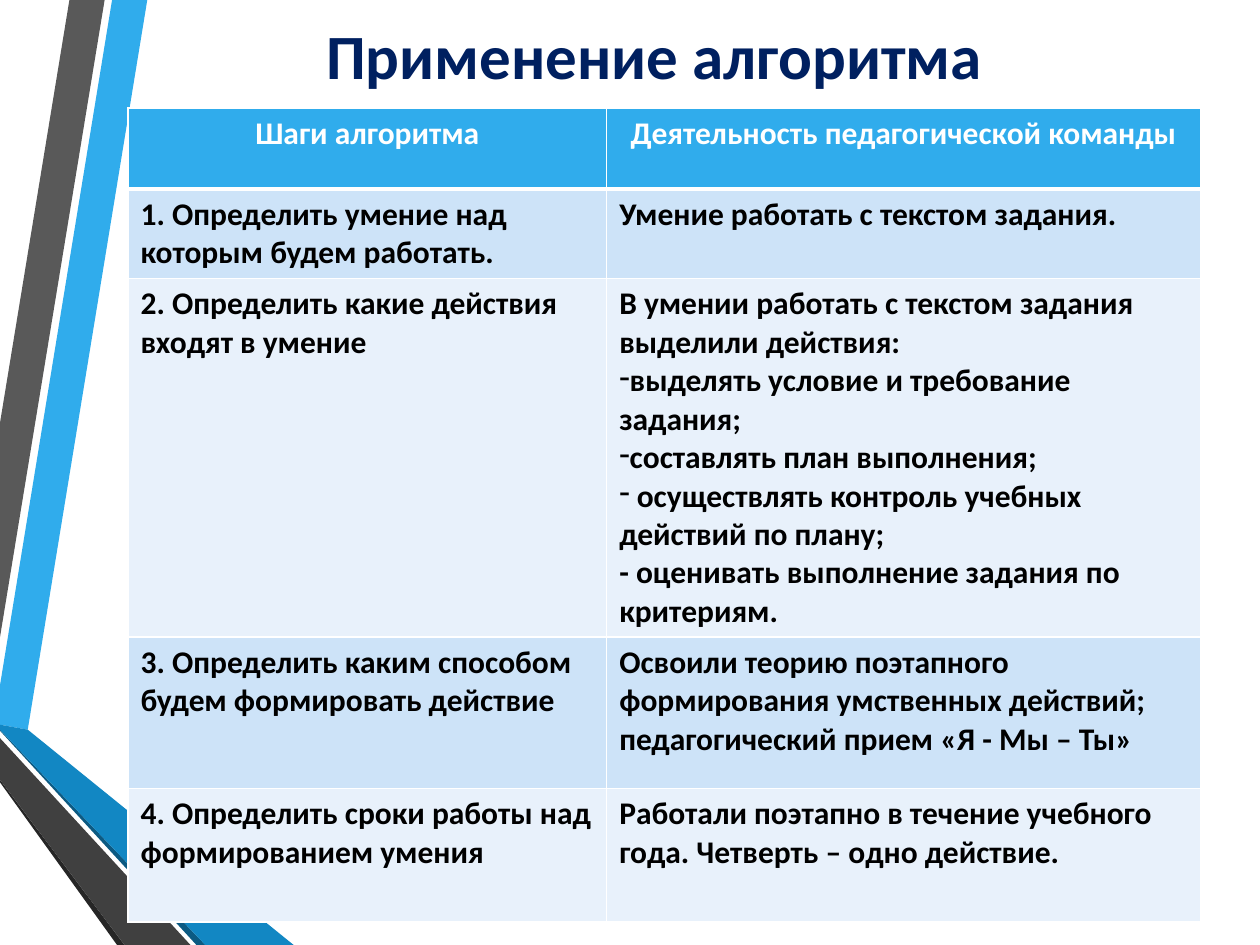
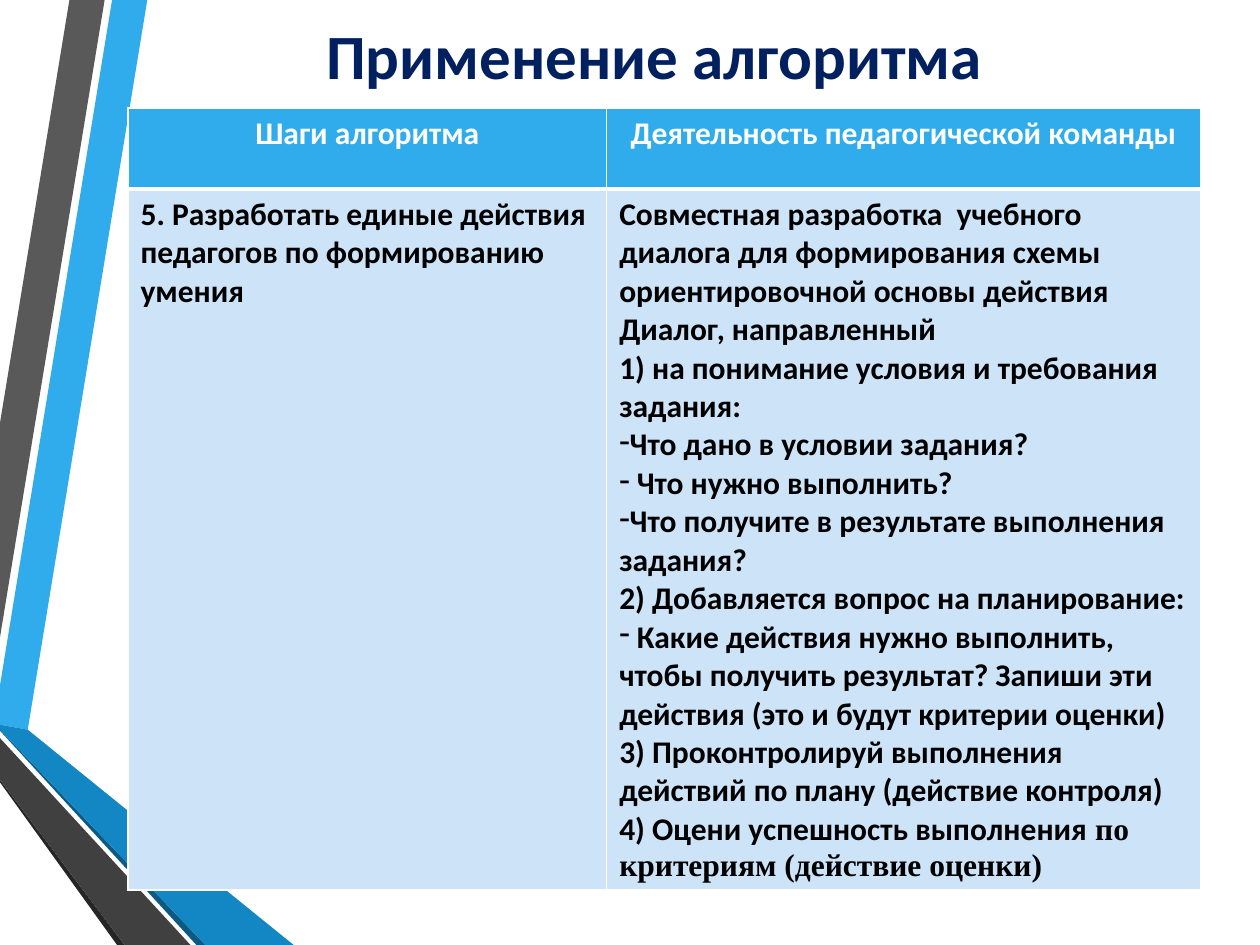
from collections import namedtuple

from lxml.etree import SubElement
from pptx import Presentation
from pptx.dml.color import RGBColor
from pptx.enum.text import MSO_ANCHOR, PP_ALIGN
from pptx.oxml.ns import qn
from pptx.util import Cm, Pt

COLORS = {
    "sky": "30ACEC",
    "gray": "595959",
    "black_fold": "262626",
    "navy_fold": "0C5A82",
    "blue": "1287C3",
    "charcoal": "404040",
    "title": "002060",
    "white": "FFFFFF",
    "text": "000000",
    "odd_row": "CDE3F8",
    "even_row": "E8F1FB",
}
FONT = "Calibri"
TITLE = "Применение алгоритма"
HEADINGS = ("Шаги алгоритма", "Деятельность педагогической команды")
COLUMN_WIDTHS = (9.65, 11.97)
HEADER_HEIGHT = 1.63

BAND_SCALE = Cm(0.01)
BANDS = [
    ("sky", [(0, 1382), (0, 1461), (56, 1471), (297, 0), (226, 0)]),
    ("gray", [(211, 0), (140, 0), (0, 853), (0, 1285)]),
    ("black_fold", [(0, 1572), (0, 1577), (236, 1905), (251, 1905)]),
    ("navy_fold", [(0, 1471), (0, 1473), (396, 1905), (414, 1905)]),
    ("blue", [(0, 1471), (414, 1905), (592, 1905), (56, 1471), (0, 1461)]),
    ("charcoal", [(0, 1572), (251, 1905), (384, 1905), (0, 1488)]),
]

Run = namedtuple("Run", "text font", defaults=[FONT])
Line = namedtuple("Line", "runs dashed")
Step = namedtuple("Step", "height name activity")


def plain(*runs):
    return Line([Run(run) if isinstance(run, str) else run for run in runs], False)


def dashed(text):
    return Line([Run(text)], True)


FIRST_STEPS = [
    Step(1.73, "1. Определить умение над которым будем работать.",
         [plain("Умение работать с текстом задания.")]),
    Step(6.93, "2. Определить какие действия входят в умение", [
        plain("В умении работать с текстом задания выделили действия:"),
        dashed("выделять условие и требование задания;"),
        dashed("составлять план выполнения;"),
        dashed(" осуществлять контроль учебных действий по плану;"),
        plain("- оценивать выполнение задания по критериям."),
    ]),
    Step(3.05, "3. Определить каким способом будем формировать действие",
         [plain("Освоили теорию поэтапного формирования умственных действий; "
                "педагогический прием «Я - Мы – Ты»")]),
    Step(2.69, "4. Определить сроки работы над формированием умения",
         [plain("Работали поэтапно в течение учебного года. "
                "Четверть – одно действие.")]),
]
LAST_STEP = [
    Step(13.97, "5. Разработать единые действия педагогов по формированию умения", [
        plain("Совместная разработка  учебного диалога для формирования схемы "
              "ориентировочной основы действия"),
        plain("Диалог, направленный"),
        plain("1) на понимание условия и требования задания:"),
        dashed("Что дано в условии задания?"),
        dashed(" Что нужно выполнить?"),
        dashed("Что получите в результате выполнения задания?"),
        plain("2) Добавляется вопрос на планирование:"),
        dashed(" Какие действия нужно выполнить, чтобы получить результат? "
               "Запиши эти действия (это и будут критерии оценки)"),
        plain("3) Проконтролируй выполнения действий по плану (действие контроля)"),
        plain("4) Оцени успешность выполнения",
              Run(" по критериям (действие оценки)", "Times New Roman")),
    ]),
]


def color(name):
    return RGBColor.from_string(COLORS[name])


def add_run(paragraph, run, size, color_name):
    added = paragraph.add_run()
    added.text = run.text
    added.font.name = run.font
    added.font.size = Pt(size)
    added.font.bold = True
    added.font.color.rgb = color(color_name)


def add_dash(paragraph):
    properties = paragraph._p.get_or_add_pPr()
    properties.set("marL", "0")
    properties.set("indent", "0")
    SubElement(properties, qn("a:buFontTx"))
    SubElement(properties, qn("a:buChar"), char="-")


def add_bands(slide, layout):
    for number, (fill, corners) in enumerate(BANDS, start=101):
        builder = slide.shapes.build_freeform(*corners[0], scale=BAND_SCALE)
        builder.add_line_segments(corners[1:], close=True)
        band = builder.convert_to_shape()
        band.fill.solid()
        band.fill.fore_color.rgb = color(fill)
        band.line.fill.background()
        band.shadow.inherit = False
        band.element.nvSpPr.cNvPr.set("id", str(number))
        layout.shapes.element.append(band.element)


def set_title(slide):
    title = slide.shapes.title
    title.left, title.top, title.width, title.height = Cm(2.77), Cm(0), Cm(20.83), Cm(2.18)
    frame = title.text_frame
    frame.vertical_anchor = MSO_ANCHOR.MIDDLE
    frame.paragraphs[0].alignment = PP_ALIGN.CENTER
    add_run(frame.paragraphs[0], Run(TITLE), 36, "title")


def set_borders(cell, top, bottom):
    properties = cell._tc.get_or_add_tcPr()
    for side, width in (("L", 1), ("R", 1), ("T", top), ("B", bottom)):
        border = SubElement(properties, qn(f"a:ln{side}"), w=str(Pt(width)))
        fill = SubElement(border, qn("a:solidFill"))
        SubElement(fill, qn("a:srgbClr"), val=COLORS["white"])


def fill_cell(cell, lines, text_color, fill, top=1, bottom=1, align=PP_ALIGN.LEFT):
    set_borders(cell, top, bottom)
    cell.fill.solid()
    cell.fill.fore_color.rgb = color(fill)
    frame = cell.text_frame
    for index, line in enumerate(lines):
        paragraph = frame.add_paragraph() if index else frame.paragraphs[0]
        paragraph.alignment = align
        if line.dashed:
            add_dash(paragraph)
        for run in line.runs:
            add_run(paragraph, run, 18, text_color)


def add_steps_table(slide, steps):
    heights = [HEADER_HEIGHT] + [step.height for step in steps]
    table = slide.shapes.add_table(
        len(heights), len(COLUMN_WIDTHS), Cm(2.58), Cm(2.18),
        Cm(sum(COLUMN_WIDTHS)), Cm(sum(heights))).table
    for column, width in zip(table.columns, COLUMN_WIDTHS):
        column.width = Cm(width)
    for row, height in zip(table.rows, heights):
        row.height = Cm(height)
    for column, heading in enumerate(HEADINGS):
        fill_cell(table.cell(0, column), [plain(heading)], "white", "sky",
                  bottom=3, align=PP_ALIGN.CENTER)
    for row, step in enumerate(steps, start=1):
        fill = "odd_row" if row % 2 else "even_row"
        for column, lines in enumerate(([plain(step.name)], step.activity)):
            fill_cell(table.cell(row, column), lines, "text", fill,
                      top=3 if row == 1 else 1)


def main():
    presentation = Presentation()
    presentation.slide_width, presentation.slide_height = Cm(25.4), Cm(19.05)
    layout = presentation.slide_layouts[5]
    for number, steps in enumerate((FIRST_STEPS, LAST_STEP)):
        slide = presentation.slides.add_slide(layout)
        if number == 0:
            add_bands(slide, layout)
        set_title(slide)
        add_steps_table(slide, steps)
    presentation.save("out.pptx")


if __name__ == "__main__":
    main()
